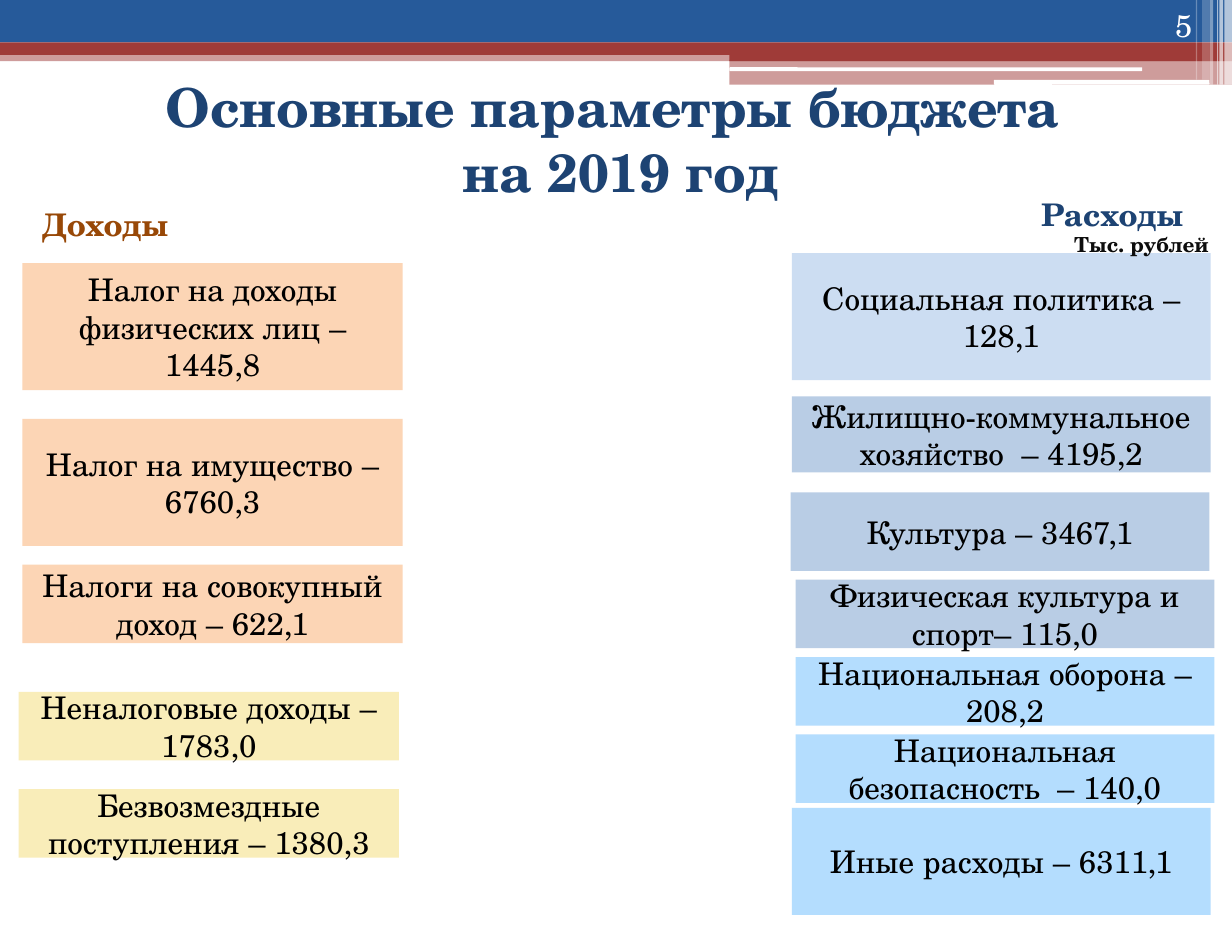
from lxml.etree import SubElement
from pptx import Presentation
from pptx.dml.color import RGBColor
from pptx.enum.shapes import MSO_SHAPE
from pptx.enum.text import MSO_ANCHOR, MSO_AUTO_SIZE, PP_ALIGN
from pptx.oxml.ns import qn
from pptx.util import Pt

EMU_PER_PX = 9144  # 100 px to the inch
COLORS = {
    "blue": "265A9A", "red": "9F3B38", "white": "FFFFFF", "black": "000000",
    "navy": "1D4373", "brown": "984807", "ink": "0D0D0D",
    "tax": "FCD5B5", "non_tax": "F9EDB9",
    "social": "CCDDF2", "services": "B9CDE5", "other": "B4DDFE",
}
BODY = {"size": Pt(18), "name": "TeX Gyre Schola", "bold": False}
LABEL = {**BODY, "bold": True}
UNIT = {**LABEL, "size": Pt(12)}
HEADING = {**LABEL, "size": Pt(31)}

# left, top, width, height, colour, opacity in percent
BANNER_BARS = [
    (0, 40, 988, 9, "red", 50),
    (0, 0, 988, 34, "blue", 100),
    (0, 34, 988, 10, "red", 100),
    (585, 39, 403, 10, "red", 100),
    (585, 48, 403, 20, "red", 50),
]
BANNER_SLOTS = [(585, 54, 331, 3), (797, 64, 173, 4)]
# left, width, height, opacity in percent
BANNER_STRIPES = [
    (982, 6, 68, 65), (978, 3, 68, 65), (976, 1, 68, 60),
    (970, 3, 68, 40), (964, 6, 64, 20), (959, 1, 64, 30),
]
INCOME_WIDTH, EXPENSE_WIDTH = 305, 336
# left, top, height, colour, text
INCOME = [
    (18, 211, 102, "tax", "Налог на доходы физических лиц – 1445,8"),
    (18, 336, 102, "tax", "Налог на имущество – 6760,3"),
    (18, 453, 63, "tax", "Налоги на совокупный доход – 622,1"),
    (15, 555, 55, "non_tax", "Неналоговые доходы – 1783,0"),
    (15, 633, 55, "non_tax", "Безвозмездные поступления – 1380,3"),
]
EXPENSES = [
    (635, 203, 102, "social", "Социальная политика – 128,1"),
    (635, 318, 61, "services", "Жилищно-коммунальное хозяйство  – 4195,2"),
    (634, 395, 63, "services", "Культура – 3467,1"),
    (638, 465, 55, "services", "Физическая культура и спорт– 115,0"),
    (638, 527, 55, "other", "Национальная оборона – 208,2"),
    (638, 589, 55, "other", "Национальная безопасность  – 140,0"),
    (635, 648, 86, "other", "Иные расходы – 6311,1"),
]


def emu(*lengths):
    return [length * EMU_PER_PX for length in lengths]


def rgb(color):
    return RGBColor.from_string(COLORS[color])


def write(shape, lines, color, look, align=PP_ALIGN.CENTER, anchor=MSO_ANCHOR.MIDDLE):
    frame = shape.text_frame
    frame.text = "\n".join(lines)
    frame.word_wrap = True
    frame.auto_size = MSO_AUTO_SIZE.NONE
    frame.vertical_anchor = anchor
    for paragraph in frame.paragraphs:
        paragraph.alignment = align
        font = paragraph.runs[0].font
        font.color.rgb = rgb(color)
        for attribute, value in look.items():
            setattr(font, attribute, value)


def add_block(slide, box, color, opacity=100, kind=MSO_SHAPE.RECTANGLE):
    block = slide.shapes.add_shape(kind, *emu(*box))
    block.shadow.inherit = False
    block.line.fill.background()
    block.fill.solid()
    block.fill.fore_color.rgb = rgb(color)
    if opacity < 100:
        hue = block.fill._xPr.find(qn("a:solidFill"))[0]
        SubElement(hue, qn("a:alpha")).set("val", str(opacity * 1000))
    return block


def add_label(slide, box, text, color, look, **placing):
    label = slide.shapes.add_textbox(*emu(*box))
    write(label, [text], color, look, **placing)


def add_banner(slide):
    for *box, color, opacity in BANNER_BARS:
        add_block(slide, box, color, opacity)
    for box in BANNER_SLOTS:
        add_block(slide, box, "white", kind=MSO_SHAPE.ROUNDED_RECTANGLE)
    for left, width, height, opacity in BANNER_STRIPES:
        add_block(slide, (left, 0, width, height), "white", opacity)


def add_title(slide, box, lines):
    title = slide.shapes.title
    title.left, title.top, title.width, title.height = emu(*box)
    write(title, lines, "navy", HEADING)


def add_budget_column(slide, items, width):
    for left, top, height, color, text in items:
        block = add_block(slide, (left, top, width, height), color)
        write(block, [text], "black", BODY)


def main():
    deck = Presentation()
    deck.slide_width, deck.slide_height = emu(988, 750)
    slide = deck.slides.add_slide(deck.slide_layouts[5])
    add_banner(slide)
    add_label(slide, (884, 0, 82, 40), "5", "white", BODY,
              align=PP_ALIGN.RIGHT, anchor=MSO_ANCHOR.BOTTOM)
    add_title(slide, (25, 55, 945, 112),
              ["Основные параметры бюджета ", "на 2019 год"])
    add_budget_column(slide, INCOME, INCOME_WIDTH)
    add_budget_column(slide, EXPENSES, EXPENSE_WIDTH)
    add_label(slide, (18, 156, 133, 47), "Доходы", "brown", LABEL)
    add_label(slide, (814, 148, 156, 47), "Расходы", "navy", LABEL)
    add_label(slide, (833, 180, 165, 31), "Тыс. рублей", "ink", UNIT)
    deck.save("out.pptx")


if __name__ == "__main__":
    main()
